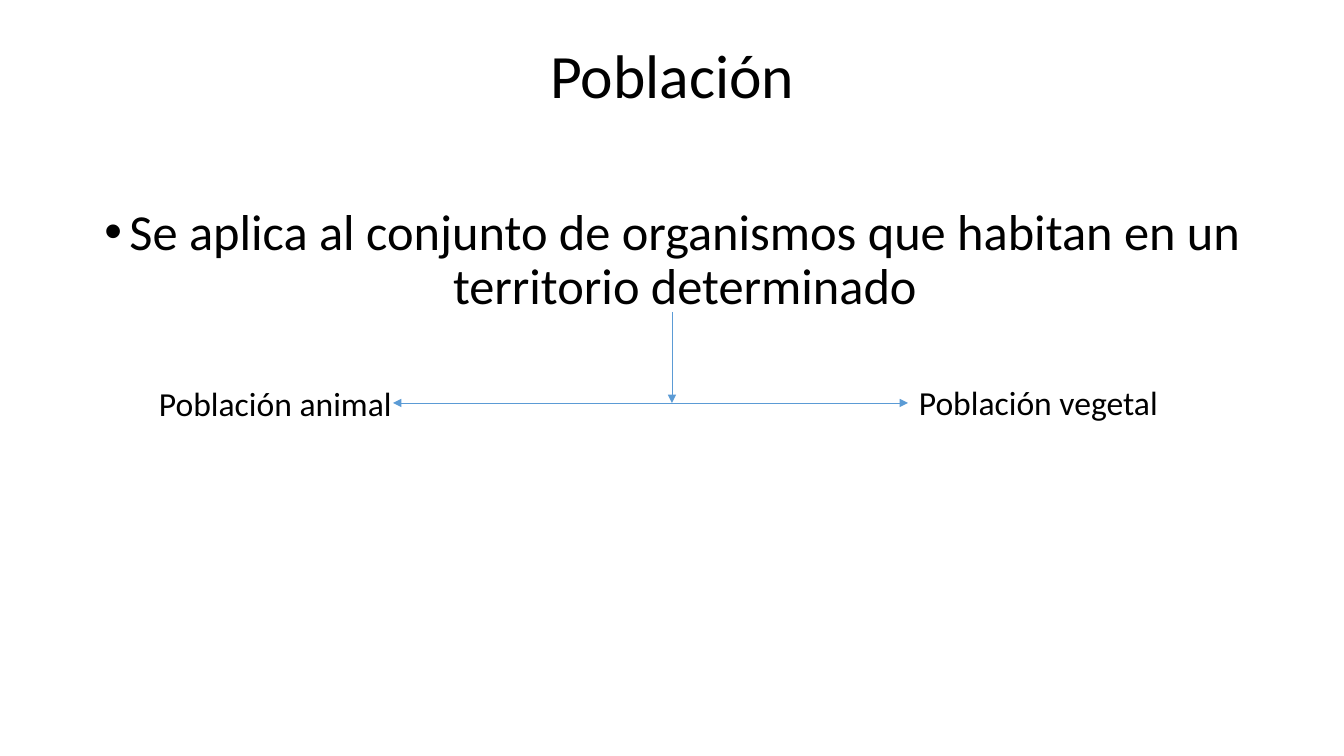
from dataclasses import dataclass

from lxml.etree import SubElement as Sub
from pptx import Presentation
from pptx.dml.color import RGBColor as Rgb
from pptx.enum.shapes import MSO_CONNECTOR as Conn
from pptx.enum.text import PP_ALIGN as Align
from pptx.oxml.ns import qn
from pptx.util import Pt


@dataclass(frozen=True)
class Theme:
    font: str = "Calibri"
    ink: Rgb = Rgb(0, 0, 0)
    line: Rgb = Rgb(0x5B, 0x9B, 0xD5)
    title: int = 44
    body: int = 36
    label: int = 24


theme = Theme()


def px(n):
    return round(n * 914400 / 100.8)


def write(slide, box, text, size, wrap=True):
    """Add a text box and return its paragraph."""
    frame = slide.shapes.add_textbox(*map(px, box)).text_frame
    frame.word_wrap = wrap
    frame.text = text
    par = frame.paragraphs[0]
    font = par.runs[0].font
    font.name, font.size = theme.font, Pt(size)
    font.color.rgb = theme.ink
    return par


deck = Presentation()
deck.slide_width, deck.slide_height = px(1344), px(756)
slide = deck.slides.add_slide(deck.slide_layouts[6])

# Title and definition
title = write(slide, (93, 40, 1159, 146), "Población", theme.title)
body = write(
    slide, (93, 202, 1159, 111),
    "Se aplica al conjunto de organismos que habitan en un territorio determinado",
    theme.body,
)
for par in (title, body):
    par.alignment = Align.CENTER
    par.line_spacing = 0.9

props = body._p.get_or_add_pPr()
props.set("marL", str(px(25)))
props.set("indent", str(-px(25)))
Sub(props, qn("a:buFont"), typeface="Arial")
Sub(props, qn("a:buChar"), char="•")

# Kinds of population
labels = [
    ("Población vegetal", (909, 377, 269, 50)),
    ("Población animal", (149, 378, 255, 50)),
]
for text, box in labels:
    write(slide, box, text, theme.label, wrap=False)

# Arrows through the fork
fork = (672, 403)
arrows = [((672, 312), fork), (fork, (908, 403)), (fork, (393, 403))]
for start, end in arrows:
    arrow = slide.shapes.add_connector(Conn.STRAIGHT, *map(px, start + end))
    arrow.line.color.rgb = theme.line
    arrow.line.width = Pt(0.5)
    Sub(arrow.line._get_or_add_ln(), qn("a:tailEnd"), type="triangle")
    Sub(arrow._element.spPr, qn("a:effectLst"))

deck.save("out.pptx")
